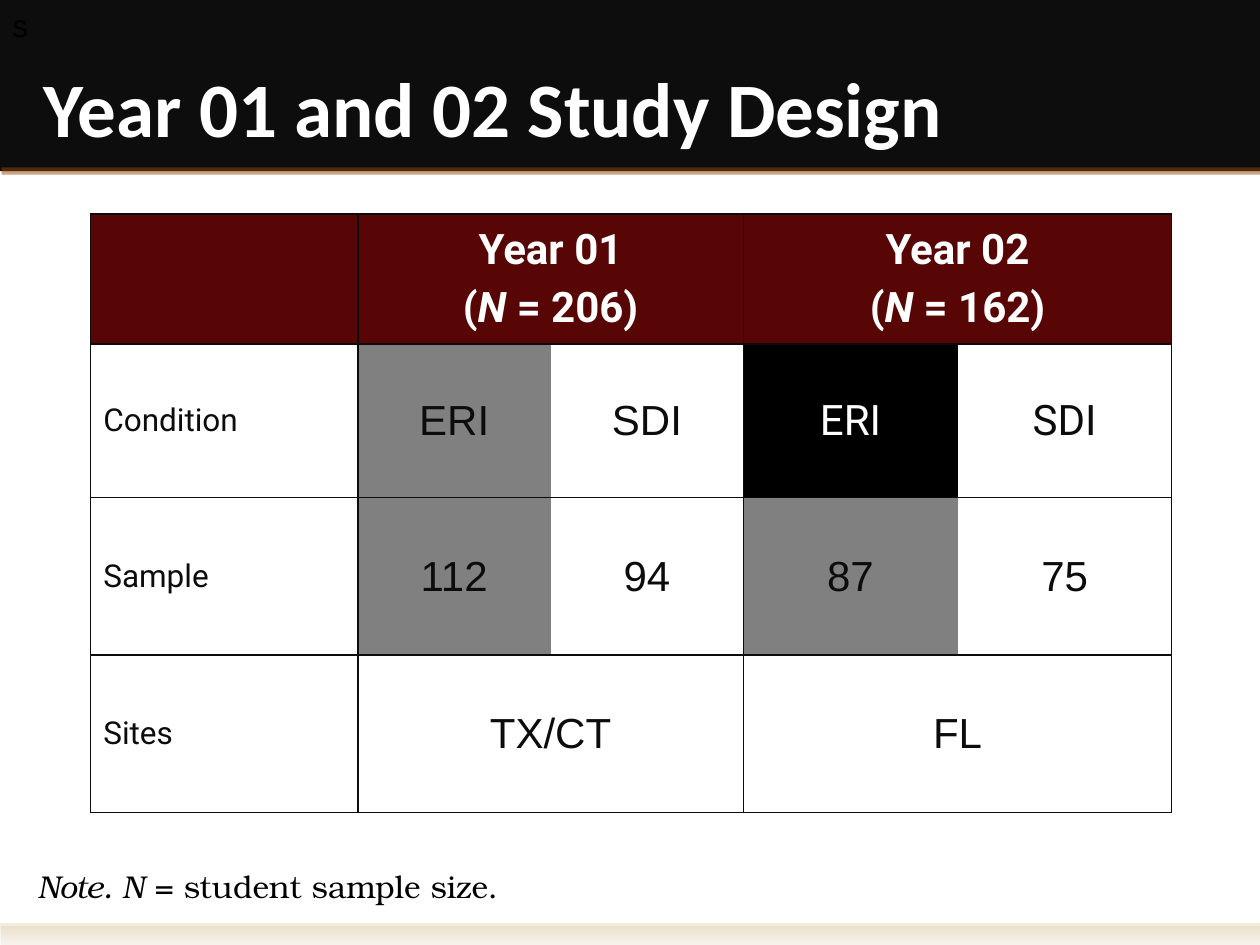
from dataclasses import dataclass

import lxml.etree
import pptx
import pptx.dml.color
import pptx.enum.shapes
import pptx.enum.text
import pptx.oxml.ns
import pptx.util

Inches, Pt = pptx.util.Inches, pptx.util.Pt
Align, Anchor = pptx.enum.text.PP_ALIGN, pptx.enum.text.MSO_ANCHOR
qn = pptx.oxml.ns.qn

INK, WHITE, GRAY, MAROON = "0C0C0C", "FFFFFF", "808080", "570605"


@dataclass
class Style:
    size: float
    face: str
    color: str = INK
    bold: bool = False
    align: Align = Align.LEFT
    before: float = 0


@dataclass
class Band:
    top: float
    height: float
    fill: str
    fade: str = ""


@dataclass
class Cell:
    row: int
    col: int
    text: str
    style: Style
    fill: str = WHITE
    span: int = 1


def rgb(code: str) -> pptx.dml.color.RGBColor:
    return pptx.dml.color.RGBColor.from_string(code)


def add(parent, tag: str, **attrs: str):
    return lxml.etree.SubElement(parent, qn(tag), attrs)


def write(frame, text: str, style: Style) -> None:
    for i, line in enumerate(text.split("\n")):
        para = frame.add_paragraph() if i else frame.paragraphs[0]
        para.alignment = style.align
        para.space_before = Pt(style.before)
        font = para.font
        font.size, font.name, font.bold = Pt(style.size), style.face, style.bold
        font.color.rgb = rgb(style.color)
        for j, part in enumerate(line.split("*")):
            if part:
                run = para.add_run()
                run.text = part
                if j % 2:
                    run.font.italic = True


def label(slide, box: tuple, text: str, style: Style, anchor: Anchor, wrap: bool) -> None:
    frame = slide.shapes.add_textbox(*map(Inches, box)).text_frame
    frame.word_wrap, frame.vertical_anchor = wrap, anchor
    write(frame, text, style)


def draw_band(slide, band: Band):
    shape = slide.shapes.add_shape(
        pptx.enum.shapes.MSO_SHAPE.RECTANGLE,
        0, Inches(band.top), Inches(10), Inches(band.height))
    shape.line.fill.background()
    if band.fade:
        shape.fill.gradient()
        shape.fill.gradient_angle = 270
        looks = ((band.fill, "82000"), (band.fade, "90000"))
        for stop, (code, alpha) in zip(shape.fill.gradient_stops, looks):
            stop.color.rgb = rgb(code)
        for node, (code, alpha) in zip(shape._element.spPr.iter(qn("a:srgbClr")), looks):
            add(node, "a:alpha", val=alpha)
    else:
        shape.fill.solid()
        shape.fill.fore_color.rgb = rgb(band.fill)
    shape.shadow.inherit = False
    effects = shape._element.spPr.find(qn("a:effectLst"))
    shade = add(effects, "a:outerShdw", blurRad="0", dist=str(Pt(2.2)),
                dir=str(63 * 60000), algn="ctr", rotWithShape="0")
    add(add(shade, "a:srgbClr", val="974706"), "a:alpha", val="50000")
    return shape


def border(cell, hidden: str) -> None:
    props = cell._tc.get_or_add_tcPr()
    for side in "LRTB":
        line = add(props, f"a:ln{side}", w=str(Pt(1)))
        if side == hidden:
            add(line, "a:noFill")
        else:
            add(add(line, "a:solidFill"), "a:srgbClr", val=INK)


def draw_grid(slide, cells: list[Cell]) -> None:
    cols, rows = (2.12, 1.53, 1.53, 1.7, 1.7), (1.03, 1.22, 1.25, 1.25)
    table = slide.shapes.add_table(
        len(rows), len(cols), Inches(0.72), Inches(1.7),
        Inches(sum(cols)), Inches(sum(rows))).table
    table.first_row = table.horz_banding = False
    for col, width in zip(table.columns, cols):
        col.width = Inches(width)
    for row, height in zip(table.rows, rows):
        row.height = Inches(height)
    for item in cells:
        cell = table.cell(item.row, item.col)
        if item.span > 1:
            other = table.cell(item.row, item.col + 1)
            cell.merge(other)
            border(other, "L")
        split = item.col and item.span == 1
        border(cell, ("R" if item.col % 2 else "L") if split else "")
        cell.fill.solid()
        cell.fill.fore_color.rgb = rgb(item.fill)
        cell.vertical_anchor = Anchor.MIDDLE
        if item.text:
            write(cell.text_frame, item.text, item.style)


def main() -> None:
    deck = pptx.Presentation()
    deck.slide_width, deck.slide_height = Inches(10), Inches(7.5)
    slide = deck.slides.add_slide(deck.slide_layouts[6])
    slide.background.fill.solid()
    slide.background.fill.fore_color.rgb = rgb(WHITE)

    draw_band(slide, Band(0.03, 1.33, INK))
    draw_band(slide, Band(7.33, 0.17, "F0E9D4", "FDFCF9"))
    top = draw_band(slide, Band(0, 1.33, "0D0D0D"))
    top.text_frame.vertical_anchor = Anchor.TOP
    write(top.text_frame, "s", Style(18, "Arial", "000000"))
    label(slide, (0.25, 0.42, 8.92, 0.84), "Year 01 and 02 Study Design",
          Style(44, "Calibri", WHITE, True), Anchor.BOTTOM, True)

    head = Style(24, "Roboto", WHITE, True, Align.CENTER, 4.8)
    side = Style(18, "Roboto", before=3.6)
    low = Style(18, "Roboto", before=12)
    kind = Style(24, "Arial", align=Align.CENTER, before=4.8)
    light = Style(24, "Roboto", WHITE, align=Align.CENTER, before=4.8)
    dark = Style(24, "Roboto", align=Align.CENTER, before=4.8)
    data = Style(24, "Arial", align=Align.CENTER)
    draw_grid(slide, [
        Cell(0, 0, "", head, MAROON),
        Cell(0, 1, "Year 01\n(*N* = 206)", head, MAROON, 2),
        Cell(0, 3, "Year 02\n(*N* = 162)", head, MAROON, 2),
        Cell(1, 0, "Condition", side),
        Cell(1, 1, "ERI", kind, GRAY),
        Cell(1, 2, "SDI", kind),
        Cell(1, 3, "ERI", light, "000000"),
        Cell(1, 4, "SDI", dark),
        Cell(2, 0, "Sample", low),
        Cell(2, 1, "112", data, GRAY),
        Cell(2, 2, "94", data),
        Cell(2, 3, "87", data, GRAY),
        Cell(2, 4, "75", data),
        Cell(3, 0, "Sites", low),
        Cell(3, 1, "TX/CT", data, span=2),
        Cell(3, 3, "FL", data, span=2),
    ])
    label(slide, (0.2, 6.83, 3.91, 0.4), "*Note. N* = student sample size.",
          Style(18, "TeX Gyre Bonum", "000000"), Anchor.TOP, False)
    deck.save("out.pptx")


if __name__ == "__main__":
    main()
